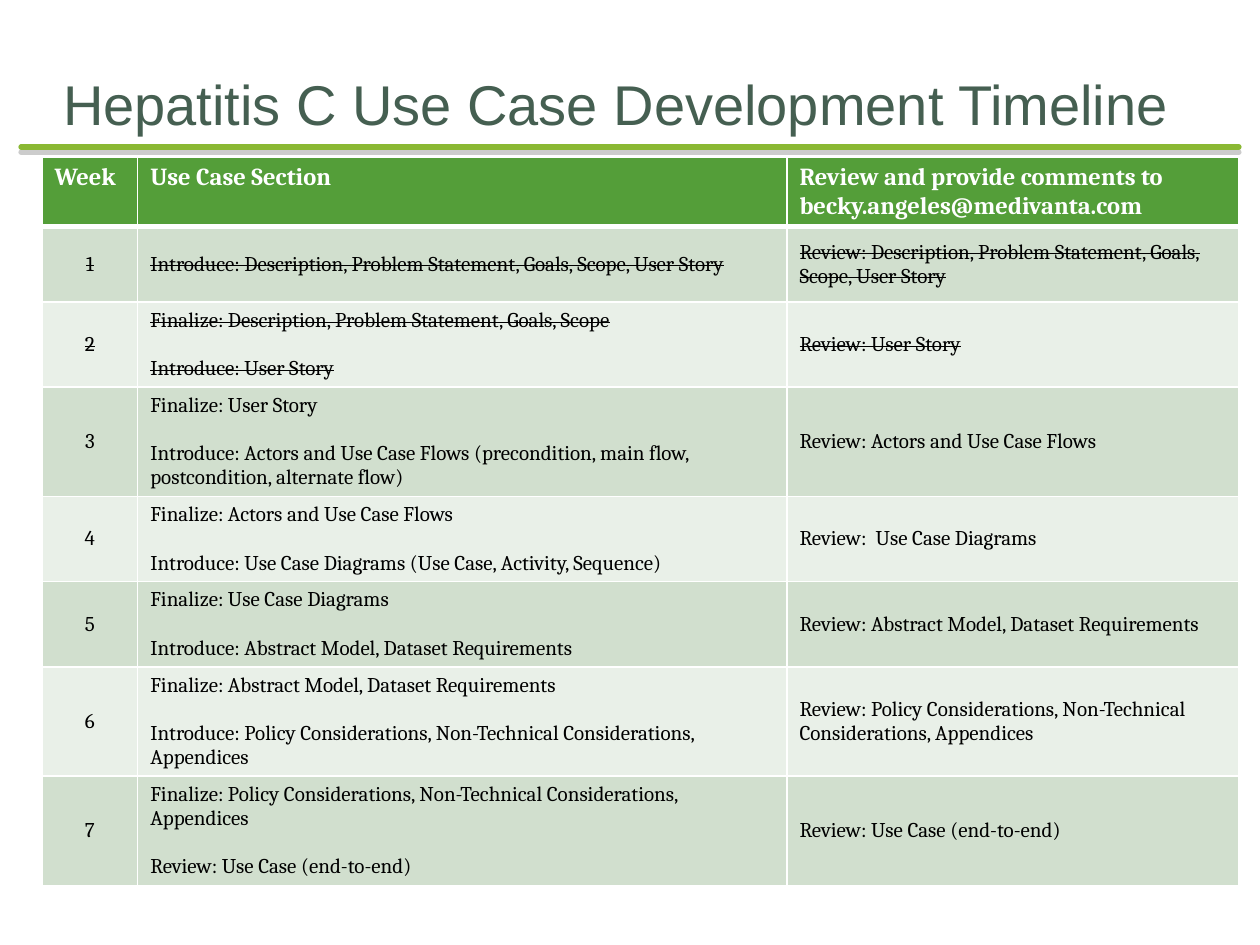
from lxml import etree
from pptx import Presentation
from pptx.dml.color import RGBColor
from pptx.enum import shapes, text
from pptx.oxml import parse_xml
from pptx.oxml.ns import nsdecls
from pptx.util import Pt

TITLE = "Hepatitis C Use Case Development Timeline"
HEADERS = ["Week", "Use Case Section",
           "Review and provide comments to becky.angeles@medivanta.com"]
# Section steps, then what to review; the week is the position in the list
WEEKS = [
    (["Introduce: Description, Problem Statement, Goals, Scope, User Story"],
     "Review: Description, Problem Statement, Goals, Scope, User Story"),
    (["Finalize: Description, Problem Statement, Goals, Scope",
      "Introduce: User Story"],
     "Review: User Story"),
    (["Finalize: User Story",
      "Introduce: Actors and Use Case Flows (precondition, main flow, "
      "postcondition, alternate flow)"],
     "Review: Actors and Use Case Flows"),
    (["Finalize: Actors and Use Case Flows",
      "Introduce: Use Case Diagrams (Use Case, Activity, Sequence)"],
     "Review:  Use Case Diagrams"),
    (["Finalize: Use Case Diagrams",
      "Introduce: Abstract Model, Dataset Requirements"],
     "Review: Abstract Model, Dataset Requirements"),
    (["Finalize: Abstract Model, Dataset Requirements",
      "Introduce: Policy Considerations, Non-Technical Considerations, Appendices"],
     "Review: Policy Considerations, Non-Technical Considerations, Appendices"),
    (["Finalize: Policy Considerations, Non-Technical Considerations, Appendices",
      "Review: Use Case (end-to-end)"],
     "Review: Use Case (end-to-end)"),
]
WEEKS_DONE = 2

SLATE = RGBColor(0x45, 0x5F, 0x51)
LIME = RGBColor(0x8A, 0xB8, 0x33)
GREEN = RGBColor(0x54, 0x9E, 0x39)
BANDS = [RGBColor(0xD1, 0xDF, 0xCE), RGBColor(0xE9, 0xF0, 0xE8)]
WHITE = RGBColor(0xFF, 0xFF, 0xFF)
BLACK = RGBColor(0, 0, 0)

COLUMN_WIDTHS = [54.7, 371, 258]
HEADER_HEIGHT, WEEK_HEIGHT = 36, 43.2
STEP_GAP = 13.8


def add_title(slide):
    title = slide.shapes.title
    title.left, title.top, title.width, title.height = Pt(36), Pt(36), Pt(654), Pt(42)
    frame = title.text_frame
    frame.text = TITLE
    frame.word_wrap = True
    frame.auto_size = text.MSO_AUTO_SIZE.NONE
    frame.vertical_anchor = text.MSO_ANCHOR.BOTTOM
    frame.margin_left = frame.margin_right = frame.margin_bottom = 0
    frame.margin_top = Pt(3.6)
    paragraph = frame.paragraphs[0]
    paragraph.alignment = text.PP_ALIGN.LEFT
    font = paragraph.runs[0].font
    font.name, font.size, font.color.rgb = "Arial", Pt(32), SLATE


def add_rule(slide):
    """Draw the line under the title, with its grey shadow below."""
    rule = slide.shapes.add_connector(
        shapes.MSO_CONNECTOR.STRAIGHT, Pt(12), Pt(84), Pt(708), Pt(84))
    rule.line.color.rgb = LIME
    rule.line.width = Pt(3)
    rule.line._get_or_add_ln().set("cap", "rnd")
    rule._element.spPr.append(parse_xml(
        f'<a:effectLst {nsdecls("a")}>'
        f'<a:outerShdw dist="{Pt(3)}" dir="5400000" algn="ctr" rotWithShape="0">'
        '<a:srgbClr val="808080"><a:alpha val="40000"/></a:srgbClr>'
        '</a:outerShdw></a:effectLst>'))


def set_borders(cell, top, bottom):
    """Give a cell white borders; top and bottom are widths in points."""
    properties = cell._tc.get_or_add_tcPr()
    widths = {"lnL": 1, "lnR": 1, "lnT": top, "lnB": bottom}
    for position, (side, width) in enumerate(widths.items()):
        border = parse_xml(
            f'<a:{side} {nsdecls("a")} w="{Pt(width)}"><a:solidFill>'
            f'<a:srgbClr val="{WHITE}"/></a:solidFill></a:{side}>')
        properties.insert(position, border)


def fill_cell(cell, lines, fill, color, size, bold=False, strike=False, centred=False):
    cell.fill.solid()
    cell.fill.fore_color.rgb = fill
    cell.text_frame.text = "\n".join(lines)
    for index, paragraph in enumerate(cell.text_frame.paragraphs):
        paragraph.alignment = text.PP_ALIGN.CENTER if centred else text.PP_ALIGN.LEFT
        if index:
            paragraph.space_before = Pt(STEP_GAP)
        run = paragraph.runs[0]
        font = run.font
        font.name, font.size, font.bold, font.color.rgb = "Cambria", Pt(size), bold, color
        if strike:
            run._r.get_or_add_rPr().set("strike", "sngStrike")


def add_timeline(slide):
    height = HEADER_HEIGHT + WEEK_HEIGHT * len(WEEKS)
    timeline = slide.shapes.add_table(
        len(WEEKS) + 1, len(HEADERS), Pt(24), Pt(90),
        Pt(sum(COLUMN_WIDTHS)), Pt(height)).table
    for column, width in zip(timeline.columns, COLUMN_WIDTHS):
        column.width = Pt(width)
    timeline.rows[0].height = Pt(HEADER_HEIGHT)
    for column, header in enumerate(HEADERS):
        cell = timeline.cell(0, column)
        fill_cell(cell, [header], GREEN, WHITE, 14, bold=True)
        set_borders(cell, top=1, bottom=3)
    for week, (steps, review) in enumerate(WEEKS, start=1):
        timeline.rows[week].height = Pt(WEEK_HEIGHT)
        for column, lines in enumerate([[str(week)], steps, [review]]):
            cell = timeline.cell(week, column)
            cell.vertical_anchor = text.MSO_ANCHOR.MIDDLE
            fill_cell(cell, lines, BANDS[(week - 1) % 2], BLACK, 12,
                      strike=week <= WEEKS_DONE, centred=column == 0)
            set_borders(cell, top=3 if week == 1 else 1, bottom=1)


def main():
    deck = Presentation()
    deck.slide_width, deck.slide_height = Pt(720), Pt(540)
    slide = deck.slides.add_slide(deck.slide_layouts[5])
    add_rule(slide)
    add_title(slide)
    add_timeline(slide)
    deck.save("out.pptx")


if __name__ == "__main__":
    main()
